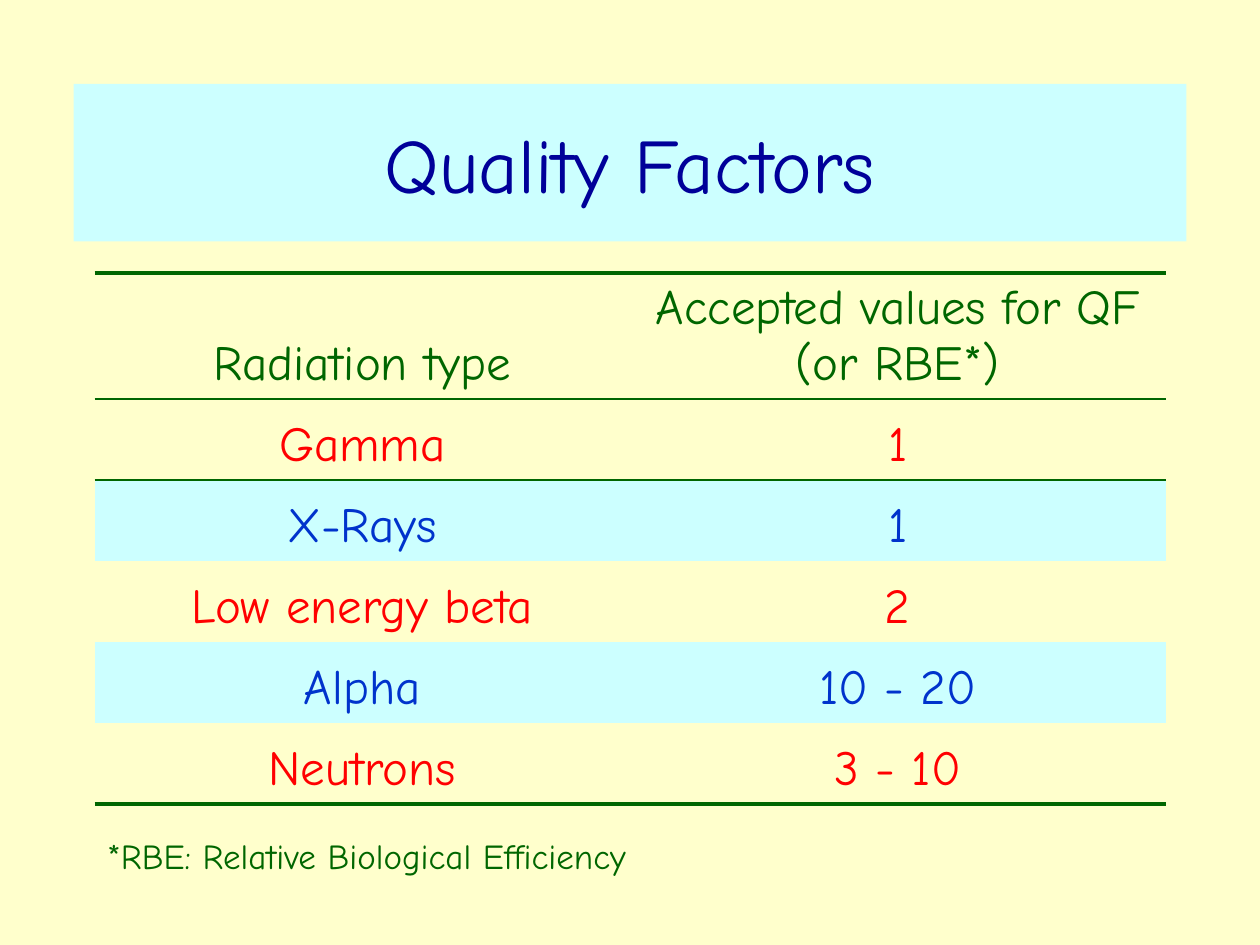
from lxml.etree import SubElement
from pptx import Presentation
from pptx.dml.color import RGBColor
from pptx.enum.text import MSO_ANCHOR as Anchor, PP_ALIGN as Align
from pptx.oxml.ns import qn
from pptx.util import Pt

FONT = "Comic Neue"
CREAM, CYAN, NAVY = "FFFFCC", "CCFFFF", "000099"
GREEN, RED, BLUE = "006600", "FF0000", "0033CC"
PLAIN_STYLE = "{2D5ABB26-0587-4C30-8999-92F81FD0307C}"
HEADER_HEIGHT, ROW_HEIGHT, COLUMN_WIDTH = 72, 46.3, 306
THICK, THIN = 2.25, 1
FACTORS = [
    ("Radiation type", "Accepted values for QF (or RBE*)"),
    ("Gamma", "1"),
    ("X-Rays", "1"),
    ("Low energy beta", "2"),
    ("Alpha", "10 - 20"),
    ("Neutrons", "3 - 10"),
]
FOOTNOTE = "*RBE: Relative Biological Efficiency"


def paint(fill, color):
    """Give a fill one solid colour."""
    fill.solid()
    fill.fore_color.rgb = RGBColor.from_string(color)


def apply_format(target, values):
    """Set every attribute named in a dict of format values."""
    for name, value in values.items():
        setattr(target, name, value)


def write_text(frame, text, size, color, align=Align.CENTER):
    """Write one formatted paragraph into a text frame."""
    para = frame.paragraphs[0]
    para.alignment = align
    span = para.add_run()
    span.text = text
    apply_format(span.font, {"name": FONT, "size": Pt(size), "bold": False})
    span.font.color.rgb = RGBColor.from_string(color)


def add_border(cell, tag, width):
    """Draw one green border on a side of a cell."""
    properties = cell._tc.get_or_add_tcPr()
    line = SubElement(properties, qn(tag), w=str(Pt(width)))
    solid = SubElement(line, qn("a:solidFill"))
    SubElement(solid, qn("a:srgbClr"), val=GREEN)


def fill_cell(cell, text, size, color, align, edges, shade):
    """Format a cell with its text, borders and shade."""
    cell.vertical_anchor = Anchor.BOTTOM
    write_text(cell.text_frame, text, size, color, align)
    for tag, width in zip(("a:lnT", "a:lnB"), edges):
        if width:
            add_border(cell, tag, width)
    if shade:
        paint(cell.fill, shade)
    else:
        cell.fill.background()


def add_title(page, text):
    """Place the title on its coloured band."""
    title = page.shapes.title
    apply_format(title, {"left": Pt(42), "top": Pt(48), "width": Pt(636), "height": Pt(90)})
    paint(title.fill, CYAN)
    title.text_frame.vertical_anchor = Anchor.MIDDLE
    write_text(title.text_frame, text, 44, NAVY)


def add_factor_table(page):
    """Add the table of factors with its footnote row."""
    count = len(FACTORS) + 1
    height = HEADER_HEIGHT + ROW_HEIGHT * (count - 1)
    frame = page.shapes.add_table(count, 2, Pt(54), Pt(156), Pt(2 * COLUMN_WIDTH), Pt(height))
    table = frame.table
    apply_format(table, {"first_row": False, "horz_banding": False})
    table._tbl.tblPr.find(qn("a:tableStyleId")).text = PLAIN_STYLE
    for index, row in enumerate(table.rows):
        row.height = Pt(ROW_HEIGHT if index else HEADER_HEIGHT)
    edges = {0: (THICK, THIN), 1: (THIN, None), count - 2: (None, THICK)}
    for index, texts in enumerate(FACTORS):
        shaded = index > 0 and index % 2 == 0
        color = GREEN if index == 0 else BLUE if shaded else RED
        for column, text in enumerate(texts):
            fill_cell(table.cell(index, column), text, 28, color, Align.CENTER,
                      edges.get(index, ()), CYAN if shaded else None)
    note = table.cell(count - 1, 0)
    note.merge(table.cell(count - 1, 1))
    fill_cell(note, FOOTNOTE, 20, GREEN, Align.LEFT, (THICK, None), None)


def main():
    """Build and save the slide."""
    deck = Presentation()
    apply_format(deck, {"slide_width": Pt(720), "slide_height": Pt(540)})
    page = deck.slides.add_slide(deck.slide_layouts[5])
    paint(page.background.fill, CREAM)
    add_title(page, "Quality Factors")
    add_factor_table(page)
    deck.save("out.pptx")


if __name__ == "__main__":
    main()
